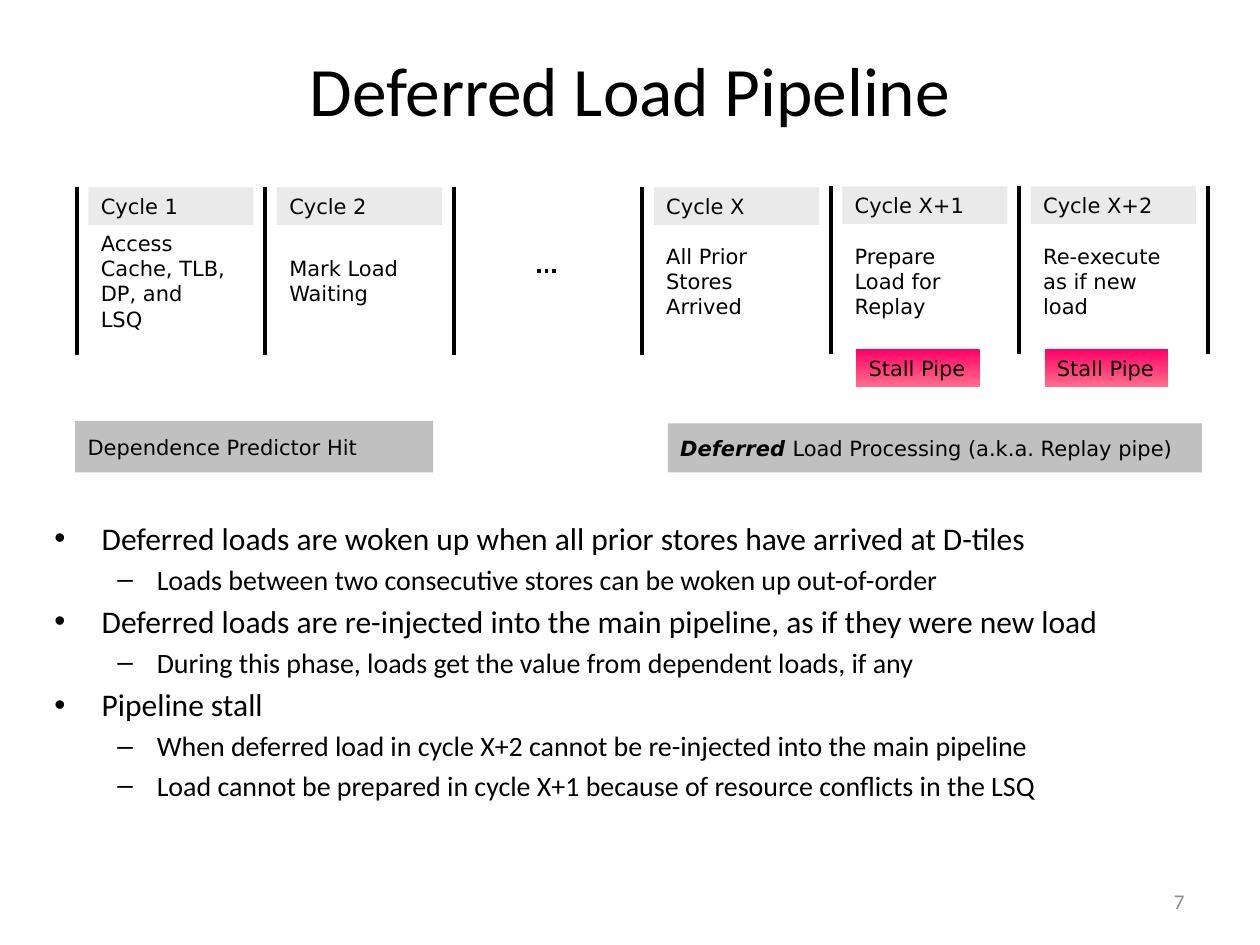
from pptx import Presentation
from pptx.dml.color import RGBColor
from pptx.enum.dml import MSO_LINE
from pptx.enum.shapes import MSO_CONNECTOR, MSO_SHAPE
from pptx.enum.text import MSO_ANCHOR, PP_ALIGN
from pptx.oxml.ns import qn
from pptx.util import Pt
from lxml import etree

BLACK = RGBColor(0x00, 0x00, 0x00)
GRAY = RGBColor(0x8C, 0x8C, 0x8C)
SILVER = RGBColor(0xC0, 0xC0, 0xC0)
PALE = RGBColor(0xEA, 0xEA, 0xEA)
PINK = RGBColor(0xFF, 0x00, 0x66)
ROSE = RGBColor(0xFF, 0x6D, 0x8A)
SANS = "DejaVu Sans"
CALIBRI = "Calibri"
RECT = MSO_SHAPE.RECTANGLE
STRAIGHT = MSO_CONNECTOR.STRAIGHT
DOTTED = MSO_LINE.ROUND_DOT
TOP = MSO_ANCHOR.TOP
MIDDLE = MSO_ANCHOR.MIDDLE
LEFT = PP_ALIGN.LEFT
CENTER = PP_ALIGN.CENTER
RIGHT = PP_ALIGN.RIGHT

START_X = 43.9
PITCH = 107.7
DIVIDER_H = 95.8
STAGE_INSET = 6.6
STAGE_MID = 160.6

STAGES = [
    (0, "Cycle 1", ["Access Cache, TLB, DP, and LSQ"], 4),
    (1, "Cycle 2", ["Mark Load Waiting"], 2),
    (3, "Cycle X", ["All Prior Stores Arrived"], 3),
    (4, "Cycle X+1", ["Prepare Load for Replay"], 3),
    (5, "Cycle X+2", ["Re-execute", "as if new load"], 3),
]

BULLETS = [
    (0, "Deferred loads are woken up when all prior stores have arrived at D-tiles"),
    (1, "Loads between two consecutive stores can be woken up out-of-order"),
    (0, "Deferred loads are re-injected into the main pipeline, as if they were new load"),
    (1, "During this phase, loads get the value from dependent loads, if any"),
    (0, "Pipeline stall"),
    (1, "When deferred load in cycle X+2 cannot be re-injected into the main pipeline"),
    (1, "Load cannot be prepared in cycle X+1 because of resource conflicts in the LSQ"),
]
BULLET_LEVELS = [("•", 18, 27, -27), ("–", 16, 58.5, -22.5)]


def add_run(p, text, size=12, font=SANS, color=BLACK, strong=False):
    r = p.add_run()
    r.text = text
    r.font.size = Pt(size)
    r.font.name = font
    r.font.color.rgb = color
    r.font.bold = r.font.italic = strong


def add_text(s, x, y, w, h):
    sp = s.shapes.add_textbox(Pt(x), Pt(y), Pt(w), Pt(h))
    sp.text_frame.word_wrap = True
    return sp.text_frame


def add_box(s, x, y, w, h, fill):
    sp = s.shapes.add_shape(RECT, Pt(x), Pt(y), Pt(w), Pt(h))
    sp.shadow.inherit = False
    sp.line.fill.background()
    if fill == PINK:
        sp.fill.gradient()
        sp.fill.gradient_angle = 270
        for stop, color in zip(sp.fill.gradient_stops, (PINK, ROSE)):
            stop.color.rgb = color
    else:
        sp.fill.solid()
        sp.fill.fore_color.rgb = fill
    tf = sp.text_frame
    tf.word_wrap = fill != PINK
    tf.vertical_anchor = MIDDLE
    p = tf.paragraphs[0]
    p.alignment = LEFT
    return p


def add_line(s, x1, y1, x2, y2):
    line = s.shapes.add_connector(STRAIGHT, Pt(x1), Pt(y1), Pt(x2), Pt(y2))
    line.line.color.rgb = BLACK
    line.line.width = Pt(2.25)
    etree.SubElement(line._element.spPr, qn("a:effectLst"))
    return line


def stage_top(i):
    return 107.1 if i < 4 else 106.5


def add_stage(s, i, name, lines, rows):
    x = START_X + i * PITCH + STAGE_INSET
    add_run(add_box(s, x, stage_top(i), 94.3, 21.4, PALE), name)
    h = 14.4 * rows + 7.2
    tf = add_text(s, x, STAGE_MID - h / 2, 87.8, h)
    for n, text in enumerate(lines):
        p = tf.add_paragraph() if n else tf.paragraphs[0]
        add_run(p, text)


def add_bullets(s):
    tf = add_text(s, 24, 293, 672, 191.5)
    tf.vertical_anchor = TOP
    for n, (level, text) in enumerate(BULLETS):
        char, size, margin, indent = BULLET_LEVELS[level]
        p = tf.add_paragraph() if n else tf.paragraphs[0]
        p.level = level
        p.space_before = Pt(size * 0.2)
        pPr = p._p.get_or_add_pPr()
        pPr.set("marL", str(Pt(margin)))
        pPr.set("indent", str(Pt(indent)))
        etree.SubElement(pPr, qn("a:buFont"), typeface="Arial")
        etree.SubElement(pPr, qn("a:buChar"), char=char)
        add_run(p, text, size, CALIBRI)


def add_title(s, text):
    title = s.shapes.title
    title.left, title.top = Pt(24), Pt(30)
    title.width, title.height = Pt(672), Pt(42)
    tf = title.text_frame
    tf.vertical_anchor = MIDDLE
    p = tf.paragraphs[0]
    p.alignment = CENTER
    add_run(p, text, 39.6, CALIBRI)


def add_page_number(s, text):
    tf = add_text(s, 516, 500.5, 168, 28.8)
    tf.vertical_anchor = MIDDLE
    p = tf.paragraphs[0]
    p.alignment = RIGHT
    add_run(p, text, 12, CALIBRI, GRAY)


def main():
    prs = Presentation()
    prs.slide_width, prs.slide_height = Pt(720), Pt(540)
    s = prs.slides.add_slide(prs.slide_layouts[5])
    add_title(s, "Deferred Load Pipeline")
    for i in range(7):
        x = START_X + i * PITCH
        add_line(s, x, stage_top(i), x, stage_top(i) + DIVIDER_H)
    for stage in STAGES:
        add_stage(s, *stage)
    add_line(s, 306.7, 154.8, 319.7, 154.8).line.dash_style = DOTTED
    for i in (4, 5):
        x = START_X + i * PITCH + 14.5
        add_run(add_box(s, x, 199.4, 70.6, 21.4, PINK), "Stall Pipe")
    add_run(add_box(s, 43, 240.5, 204.5, 29.5, SILVER), "Dependence Predictor Hit")
    p = add_box(s, 381.6, 241.9, 305.3, 28.1, SILVER)
    add_run(p, "Deferred ", strong=True)
    add_run(p, "Load Processing (a.k.a. Replay pipe)")
    add_bullets(s)
    add_page_number(s, "7")
    prs.save("out.pptx")


if __name__ == "__main__":
    main()
